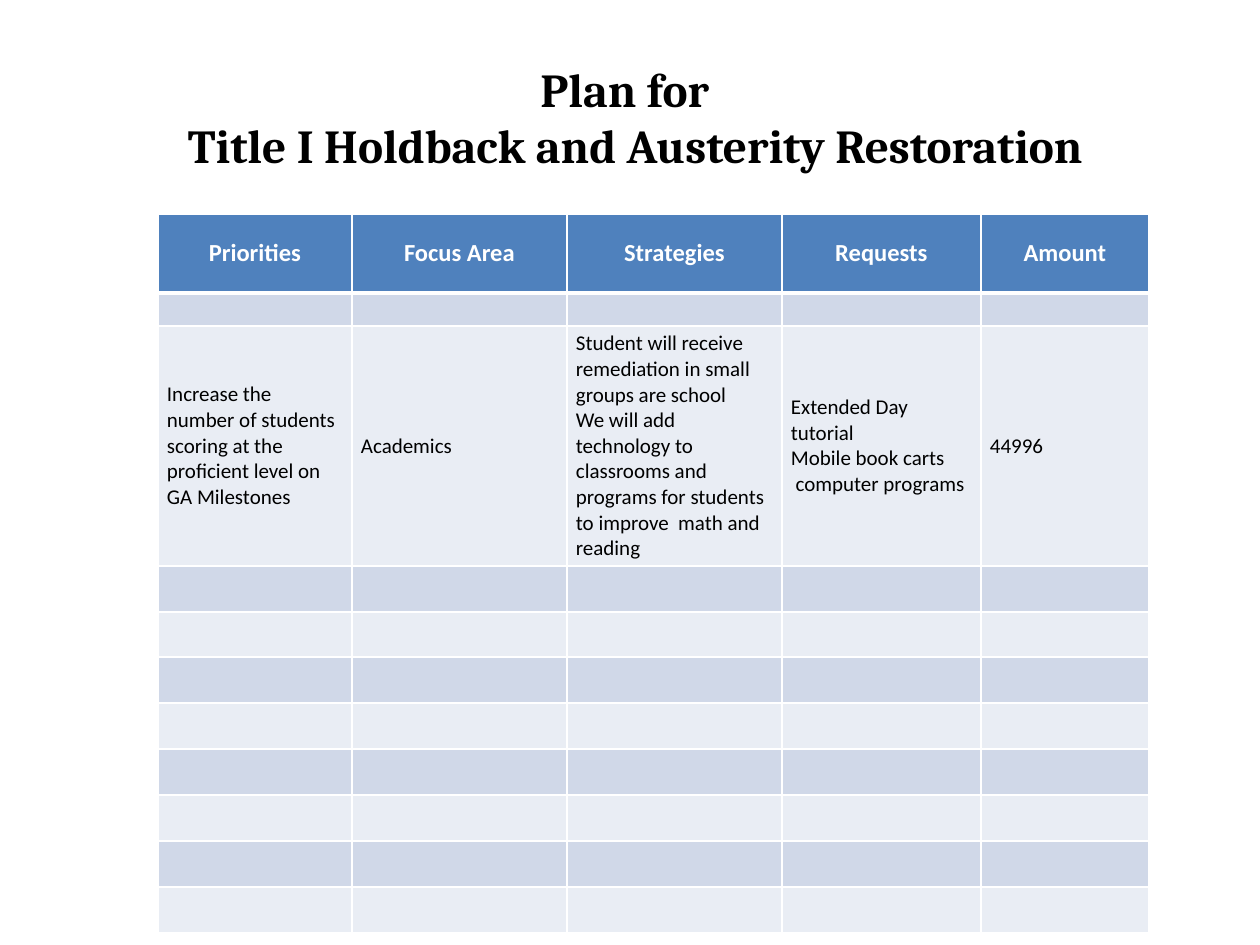
from lxml import etree
from pptx import Presentation, util as u
from pptx.dml.color import RGBColor
from pptx.enum import text
from pptx.oxml.ns import qn

PX = 914400 / 126


def px(length):
    return u.Emu(round(length * PX))


def style(item, size, face, color, bold=False):
    item.font.size = u.Pt(size)
    item.font.name = face
    item.font.bold = bold
    item.font.color.rgb = RGBColor.from_string(color)


deck = Presentation()
deck.slide_width, deck.slide_height = px(1260), px(945)
slide = deck.slides.add_slide(deck.slide_layouts[6])

# Title
title = slide.shapes.add_textbox(px(63), px(38), px(1134), px(157)).text_frame
title.word_wrap = True
title.vertical_anchor = text.MSO_ANCHOR.MIDDLE
heading = title.paragraphs[0]
heading.text = "Plan for \v Title I Holdback and Austerity Restoration"
heading.alignment = text.PP_ALIGN.CENTER
for run in heading.runs:
    style(run, 27, "Cambria", "000000", True)

# Plan contents: header, spacer row, one priority, blank rows
headers = ["Priorities", "Focus Area", "Strategies", "Requests", "Amount"]
priority = [
    "Increase the number of students scoring at the proficient level on GA Milestones",
    "Academics",
    "Student will receive remediation in small groups are school\n"
    "We will add technology to classrooms and programs for students to improve  math and reading",
    "Extended Day tutorial\nMobile book carts\n computer programs",
    "44996",
]
blank = [""] * len(headers)
rows = [headers, blank, priority] + [blank] * 8
column_widths = [194, 215, 215, 199, 168]
row_heights = [79, 33, 240] + [46, 45] + [46] * 6

# Table
plan = slide.shapes.add_table(len(rows), len(headers), px(158), px(214),
                              px(sum(column_widths)), px(sum(row_heights))).table
for column, width in zip(plan.columns, column_widths):
    column.width = px(width)

for r, (row, height) in enumerate(zip(rows, row_heights)):
    plan.rows[r].height = px(height)
    is_header = r == 0
    fill = "4F81BD" if is_header else ("D0D8E8" if r % 2 else "E9EDF4")
    for c, words in enumerate(row):
        cell = plan.cell(r, c)
        cell.margin_left = cell.margin_right = px(9)
        cell.margin_top = cell.margin_bottom = px(5)
        cell.vertical_anchor = text.MSO_ANCHOR.MIDDLE

        # White borders, heavier between header and body
        properties = cell._tc.get_or_add_tcPr()
        for side in ("lnL", "lnR", "lnT", "lnB"):
            heavy = (r, side) in ((0, "lnB"), (1, "lnT"))
            line = etree.SubElement(properties, qn("a:" + side), w=str(u.Pt(3 if heavy else 1)))
            paint = etree.SubElement(line, qn("a:solidFill"))
            etree.SubElement(paint, qn("a:srgbClr"), val="FFFFFF")
        cell.fill.solid()
        cell.fill.fore_color.rgb = RGBColor.from_string(fill)

        cell.text_frame.text = words
        for paragraph in cell.text_frame.paragraphs:
            if is_header:
                paragraph.alignment = text.PP_ALIGN.CENTER
            for run in paragraph.runs:
                style(run, 14 if is_header else 12, "Calibri",
                      "FFFFFF" if is_header else "000000", is_header)
            if not words:
                # Small type keeps the blank rows low
                etree.SubElement(paragraph._p, qn("a:endParaRPr"), sz="1000")

deck.save("out.pptx")
